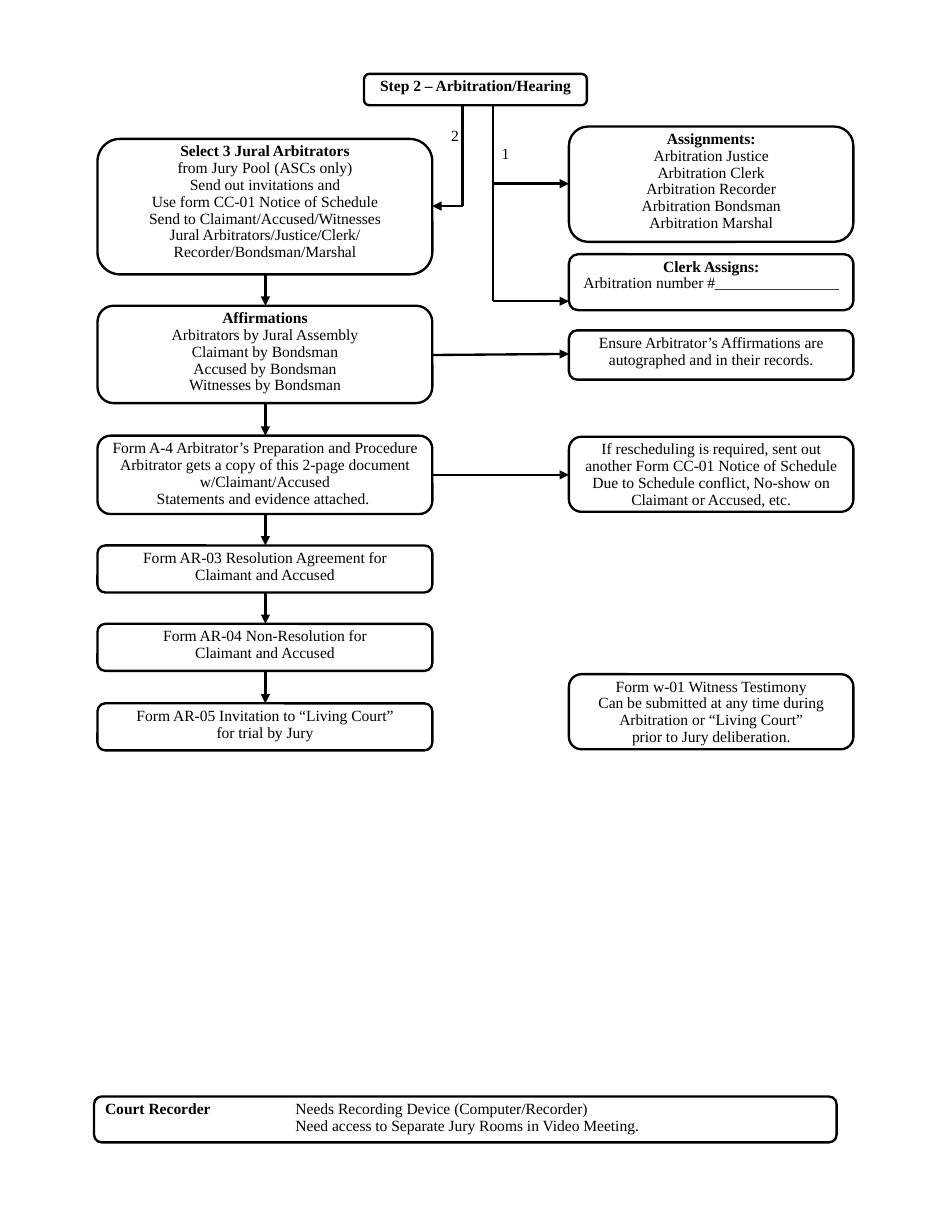
from dataclasses import dataclass

from lxml import etree
from pptx import Presentation
from pptx import util as u
from pptx.dml.color import RGBColor
from pptx.enum import shapes, text
from pptx.oxml.ns import qn

PX = 9144
COLORS = {"ink": "000000"}
INK = RGBColor.from_string(COLORS["ink"])
FONT = {"name": "Times New Roman", "size": u.Pt(10)}
FRAME = {"word_wrap": True, "vertical_anchor": text.MSO_ANCHOR.TOP}
TEXT_LIFT = 1
TAB_STOPS = (85, 170)

LEFT_X, LEFT_W = 87, 299
RIGHT_X, RIGHT_W = 508, 254
LEFT_EDGE = LEFT_X + LEFT_W
FLOW_X = 237
PATH_1, PATH_2, PATH_TOP = 440, 413, 94


@dataclass(frozen=True)
class Box:
    x: int
    y: int
    w: int
    h: int
    lines: tuple[str, ...]
    heading: str = ""
    centred: bool = True


@dataclass(frozen=True)
class Link:
    x1: int
    y1: int
    x2: int
    y2: int
    arrow: bool = True


@dataclass(frozen=True)
class Label:
    x: int
    y: int
    words: str


title = Box(325, 66, 199, 28, ("",), "Step 2 – Arbitration/Hearing")

procedure = [
    Box(LEFT_X, 124, LEFT_W, 121, (
        "", "from Jury Pool (ASCs only)", "Send out invitations and",
        "Use form CC-01 Notice of Schedule",
        "Send to Claimant/Accused/Witnesses",
        "Jural Arbitrators/Justice/Clerk/",
        "Recorder/Bondsman/Marshal"), "Select 3 Jural Arbitrators"),
    Box(LEFT_X, 273, LEFT_W, 87, (
        "", "Arbitrators by Jural Assembly", "Claimant by Bondsman",
        "Accused by Bondsman", "Witnesses by Bondsman"), "Affirmations"),
    Box(LEFT_X, 389, LEFT_W, 70, (
        "Form A-4 Arbitrator’s Preparation and Procedure",
        "Arbitrator gets a copy of this 2-page document w/Claimant/Accused",
        "Statements and evidence attached. ")),
    Box(LEFT_X, 487, LEFT_W, 42, (
        "Form AR-03 Resolution Agreement for", "Claimant and Accused")),
    Box(LEFT_X, 557, LEFT_W, 42, (
        "Form AR-04 Non-Resolution for", "Claimant and Accused")),
    Box(LEFT_X, 628, LEFT_W, 42, (
        "Form AR-05 Invitation to “Living Court”", "for trial by Jury")),
]

side_notes = [
    Box(RIGHT_X, 113, RIGHT_W, 103, (
        "", "Arbitration Justice", "Arbitration Clerk",
        "Arbitration Recorder", "Arbitration Bondsman",
        "Arbitration Marshal"), "Assignments:"),
    Box(RIGHT_X, 227, RIGHT_W, 50, (
        "", "Arbitration number #________________"), "Clerk Assigns:"),
    Box(RIGHT_X, 295, RIGHT_W, 44, (
        "Ensure Arbitrator’s Affirmations are",
        "autographed and in their records.")),
    Box(RIGHT_X, 390, RIGHT_W, 67, (
        "If rescheduling is required, sent out another "
        "Form CC-01 Notice of Schedule",
        "Due to Schedule conflict, No-show on Claimant or Accused, etc.")),
    Box(RIGHT_X, 602, RIGHT_W, 67, (
        "Form w-01 Witness Testimony", "Can be submitted at any time during",
        "Arbitration or “Living Court”", "prior to Jury deliberation.")),
]

recorder = Box(84, 979, 663, 41, (
    "Needs Recording Device (Computer/Recorder)",
    "\t\tNeed access to Separate Jury Rooms in Video Meeting."),
    "Court Recorder \t", centred=False)

links = [
    Link(PATH_2, 184, LEFT_EDGE, 184),
    Link(PATH_1, 164, RIGHT_X, 164),
    Link(PATH_2, 184, PATH_2, PATH_TOP, arrow=False),
    Link(PATH_1, 269, PATH_1, PATH_TOP, arrow=False),
    Link(PATH_1, 269, RIGHT_X, 269),
    Link(LEFT_EDGE, 317, RIGHT_X, 316),
    Link(LEFT_EDGE, 424, RIGHT_X, 424),
] + [Link(FLOW_X, above.y + above.h, FLOW_X, below.y)
     for above, below in zip(procedure, procedure[1:])]

labels = [Label(438, 124, "1"), Label(393, 108, "2")]


def apply(target, values: dict) -> None:
    for name, value in values.items():
        setattr(target, name, value)


def add_run(paragraph, words: str, bold: bool = False) -> None:
    run = paragraph.add_run()
    run.text = words
    apply(run.font, {**FONT, "bold": bold})
    run.font.color.rgb = INK


def ink_line(line) -> None:
    line.color.rgb = INK
    line.width = u.Pt(1.5)


def add_tab_stops(paragraph) -> None:
    stops = etree.SubElement(paragraph._p.get_or_add_pPr(), qn("a:tabLst"))
    for stop in TAB_STOPS:
        etree.SubElement(stops, qn("a:tab"), pos=str(stop * PX), algn="l")


def draw_box(slide, box: Box) -> None:
    words = slide.shapes.add_textbox(
        box.x * PX, (box.y - TEXT_LIFT) * PX, box.w * PX, box.h * PX)
    frame = words.text_frame
    apply(frame, FRAME)
    for i, line in enumerate(box.lines):
        paragraph = frame.add_paragraph() if i else frame.paragraphs[0]
        paragraph.line_spacing = 0.9
        if box.centred:
            paragraph.alignment = text.PP_ALIGN.CENTER
        else:
            add_tab_stops(paragraph)
        if i == 0 and box.heading:
            add_run(paragraph, box.heading, bold=True)
        if line:
            add_run(paragraph, line)
    outline = slide.shapes.add_shape(
        shapes.MSO_SHAPE.ROUNDED_RECTANGLE,
        box.x * PX, box.y * PX, box.w * PX, box.h * PX)
    outline.shadow.inherit = False
    outline.fill.background()
    ink_line(outline.line)


def draw_link(slide, link: Link) -> None:
    connector = slide.shapes.add_connector(
        shapes.MSO_CONNECTOR.STRAIGHT,
        link.x1 * PX, link.y1 * PX, link.x2 * PX, link.y2 * PX)
    ink_line(connector.line)
    if link.arrow:
        etree.SubElement(connector.line._get_or_add_ln(),
                         qn("a:tailEnd"), type="triangle")
    etree.SubElement(connector._element.spPr, qn("a:effectLst"))


def draw_label(slide, label: Label) -> None:
    number = slide.shapes.add_textbox(
        label.x * PX, label.y * PX, 25 * PX, 27 * PX)
    apply(number.text_frame, {
        **FRAME, "auto_size": text.MSO_AUTO_SIZE.SHAPE_TO_FIT_TEXT})
    add_run(number.text_frame.paragraphs[0], label.words)


def main() -> None:
    deck = Presentation()
    apply(deck, {"slide_width": 850 * PX, "slide_height": 1100 * PX})
    slide = deck.slides.add_slide(deck.slide_layouts[6])
    for box in [title, *procedure, *side_notes, recorder]:
        draw_box(slide, box)
    for link in links:
        draw_link(slide, link)
    for label in labels:
        draw_label(slide, label)
    deck.save("out.pptx")


if __name__ == "__main__":
    main()
